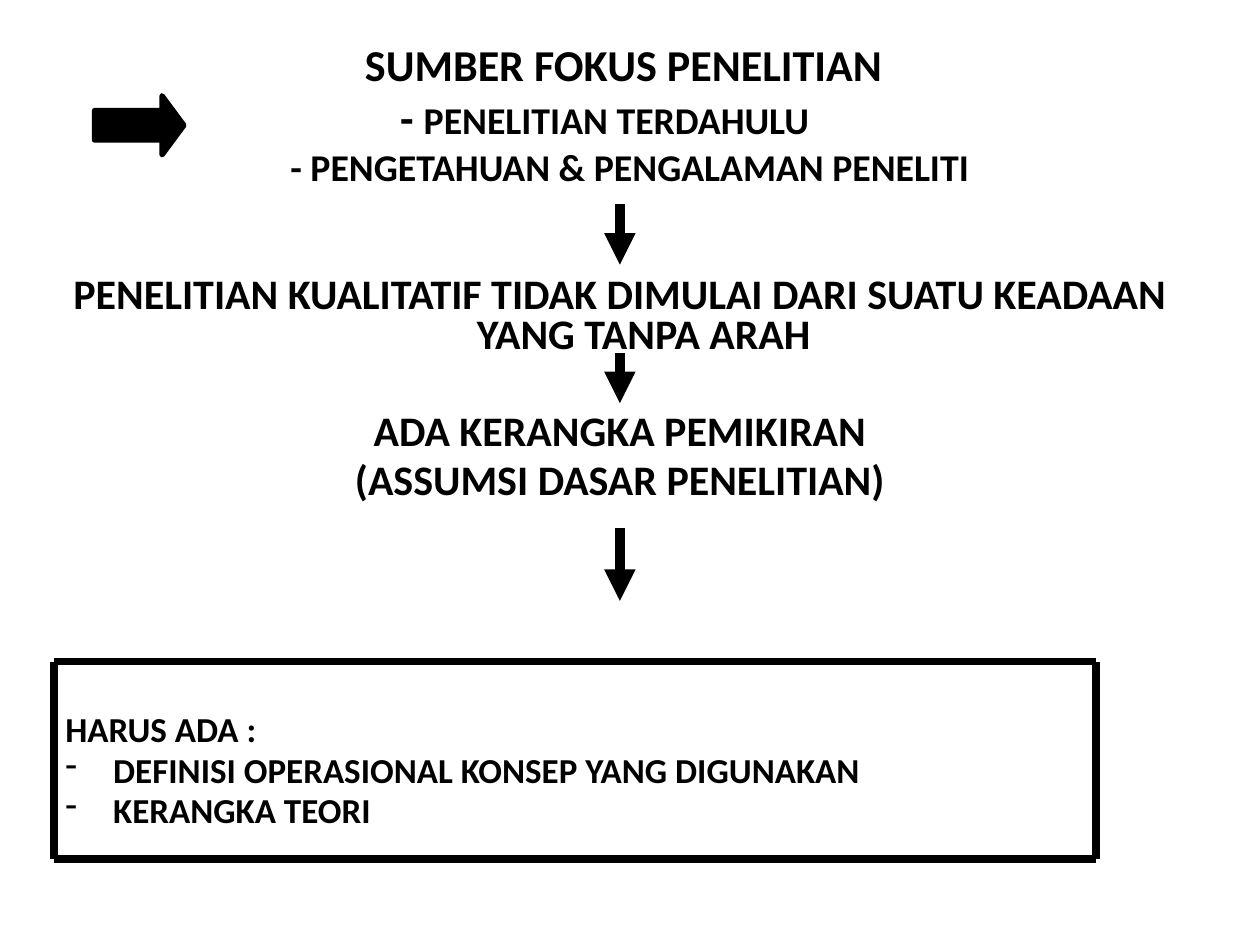
from lxml.etree import SubElement
from pptx import Presentation
from pptx.dml.color import RGBColor
from pptx.enum.shapes import MSO_CONNECTOR, MSO_SHAPE
from pptx.enum.text import MSO_ANCHOR, PP_ALIGN
from pptx.oxml.ns import qn
from pptx.util import Inches, Pt

BLACK = RGBColor(0, 0, 0)
WHITE = RGBColor(255, 255, 255)

deck = Presentation()
deck.slide_width, deck.slide_height = Inches(10), Inches(7.5)
COL = deck.slide_width / 100
ROW = deck.slide_height / 75
slide = deck.slides.add_slide(deck.slide_layouts[6])
slide.background.fill.solid()
slide.background.fill.fore_color.rgb = WHITE


def put_text(lines, at, anchor=MSO_ANCHOR.TOP, align=PP_ALIGN.CENTER,
             gap=0, pitch=None, inset=3.8):
    """Each line is (runs, hang, bullet); runs are (text, size), hang is in columns."""
    x, y, w, h = at
    frame = slide.shapes.add_textbox(
        int(x * COL), int(y * ROW), int(w * COL), int(h * ROW)).text_frame
    frame.word_wrap = True
    frame.vertical_anchor = anchor
    for i, (runs, hang, bullet) in enumerate(lines):
        para = frame.paragraphs[0] if i == 0 else frame.add_paragraph()
        props = para._p.get_or_add_pPr()
        props.set("marL", str(int(inset * COL)))
        props.set("indent", str(int(-hang * COL)))
        if bullet:
            SubElement(props, qn("a:buChar")).set("char", bullet)
        para.alignment = align
        para.line_spacing = pitch
        para.space_before = Pt(gap if i else 0)
        for words, size in runs:
            run = para.add_run()
            run.text = words
            font = run.font
            font.name, font.size, font.bold = "Calibri", Pt(size), True
            font.color.rgb = BLACK


def put_line(x1, y1, x2, y2, width, arrow=False):
    link = slide.shapes.add_connector(
        MSO_CONNECTOR.STRAIGHT, int(x1 * COL), int(y1 * ROW),
        int(x2 * COL), int(y2 * ROW))
    link.line.color.rgb = BLACK
    link.line.width = Pt(width)
    if arrow:
        SubElement(link.line._get_or_add_ln(), qn("a:tailEnd")).set("type", "triangle")
    SubElement(link._element.spPr, qn("a:effectLst"))


# Sources of the research focus; the hang shifts each centred line leftwards
put_text([
    ([("SUMBER FOKUS PENELITIAN", 25.2)], 1, None),
    ([("- ", 25.2), ("PENELITIAN TERDAHULU", 21.6)], 4, None),
    ([("- PENGETAHUAN & PENGALAMAN PENELITI", 21.6)], 0, None),
], (1, 2.5, 94, 13), anchor=MSO_ANCHOR.MIDDLE, inset=4)

# Steps of the flow
claim = "PENELITIAN KUALITATIF TIDAK DIMULAI DARI SUATU KEADAAN YANG TANPA ARAH"
put_text([([(claim, 24)], 3.8, None)], (4.2, 21.5, 90, 7.5), pitch=0.8)
put_text([([(words, 24)], 3.8, None) for words in
          ("ADA KERANGKA PEMIKIRAN", "(ASSUMSI DASAR PENELITIAN)")],
         (4.2, 32.4, 90, 8.5), gap=4.8, pitch=0.8)
put_text([([(words, 20)], 3.8, mark) for words, mark in
          (("HARUS ADA :", None),
           ("DEFINISI OPERASIONAL KONSEP YANG DIGUNAKAN", "-"),
           ("KERANGKA TEORI", "-"))],
         (4.2, 56.3, 90, 10.5), align=PP_ALIGN.LEFT, gap=4, pitch=0.8)

# Arrows between the steps
for top, end in ((16.2, 21), (28, 32), (41.9, 47.7)):
    put_line(49.2, top, 49.2, end, 6, arrow=True)

# Frame around the requirements
left, top, right, base = 4.3, 52.5, 87, 68.2
for y in (top, base):
    put_line(left, y, right, y, 4.5)
for x in (left, right):
    put_line(x, top, x, base, 4.5)

# Pointer to the sources
block = slide.shapes.add_shape(
    MSO_SHAPE.RIGHT_ARROW, int(7.5 * COL), int(7.6 * ROW),
    int(7.1 * COL), int(4.7 * ROW))
block.shadow.inherit = False
block.adjustments[0], block.adjustments[1] = 0.5, 0.37
block.fill.solid()
block.fill.fore_color.rgb = BLACK
block.line.color.rgb = BLACK
block.line.width = Pt(3)

deck.save("out.pptx")
